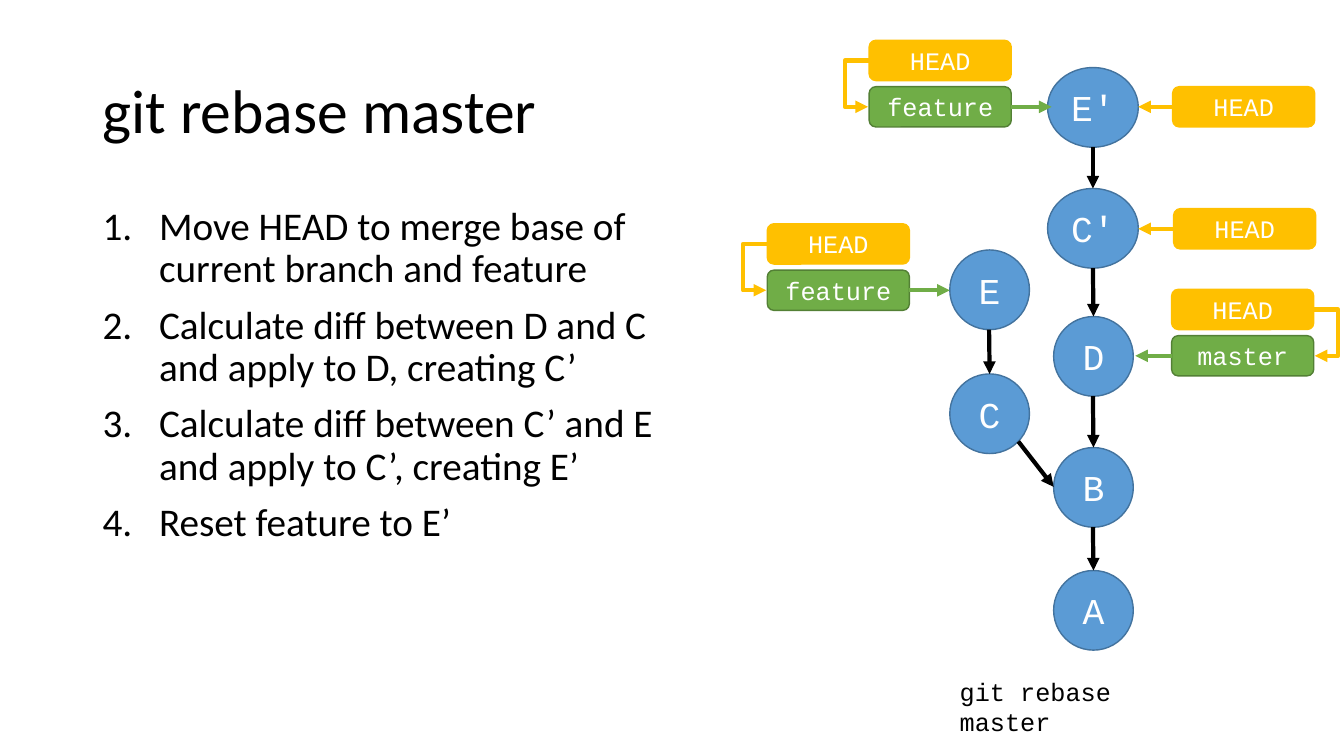
import pptx
import pptx.util
import pptx.dml.color
import pptx.enum.shapes
import pptx.enum.text
import pptx.oxml
import pptx.oxml.ns
from dataclasses import dataclass

PX = 9144  # 100 px to the inch
SHAPE = pptx.enum.shapes.MSO_SHAPE
CONNECTOR = pptx.enum.shapes.MSO_CONNECTOR
ANCHOR = pptx.enum.text.MSO_ANCHOR
ALIGN = pptx.enum.text.PP_ALIGN


@dataclass(frozen=True)
class Theme:
    sans: str = "Calibri"
    mono: str = "Courier New"
    black: str = "000000"
    white: str = "FFFFFF"
    commit: str = "5B9BD5"
    commit_line: str = "43739E"
    branch: str = "70AD47"
    branch_line: str = "538035"
    head: str = "FFC000"
    title_size: int = 44
    body_size: int = 28
    commit_size: int = 26
    label_size: int = 18
    outline: int = 1
    arrow: int = 3


T = Theme()
LABEL_W, LABEL_H, LABEL_PITCH = 141, 40, 46
NODE_H = 79

STEPS = [
    "Move HEAD to merge base of current branch and feature",
    "Calculate diff between D and C and apply to D, creating C’",
    "Calculate diff between C’ and E and apply to C’, creating E’",
    "Reset feature to E’",
]
# commit: left, top, width inside the graph
COMMITS = {
    "A": (309, 526, 79), "B": (309, 404, 79), "D": (309, 274, 79),
    "C": (206, 331, 79), "E": (206, 208, 79),
    "C'": (303, 147, 90), "E'": (303, 27, 90),
}
PARENTS = [("B", "A"), ("D", "B"), ("E", "C"), ("C'", "D"), ("E'", "C'")]
# label, left, top, commit it points to, gap at the tip, HEAD stacked above
REFS = [
    ("master", 426, 293, "D", 2, True),
    ("feature", 25, 228, "E", 0, True),
    ("feature", 126, 46, "E'", -4, True),
    ("HEAD", 428, 167, "C'", 0, False),
    ("HEAD", 427, 46, "E'", 0, False),
]


def emu(*lengths):
    return [pptx.util.Emu(n * PX) for n in lengths]


def rgb(color):
    return pptx.dml.color.RGBColor.from_string(color)


def style_runs(tf, font, size, color):
    for p in tf.paragraphs:
        for r in p.runs:
            r.font.name = font
            r.font.size = pptx.util.Pt(size)
            r.font.color.rgb = rgb(color)


def add_text(slide, box, text, font, size):
    tf = slide.shapes.add_textbox(*emu(*box)).text_frame
    tf.word_wrap = True
    tf.text = text
    style_runs(tf, font, size, T.black)
    return tf


def add_node(slide, kind, box, text, size, fill, line):
    sp = slide.shapes.add_shape(kind, *emu(*box))
    sp.shadow.inherit = False
    sp.fill.solid()
    sp.fill.fore_color.rgb = rgb(fill)
    sp.line.color.rgb = rgb(line)
    sp.line.width = pptx.util.Pt(T.outline)
    tf = sp.text_frame
    tf.text = text
    tf.vertical_anchor = ANCHOR.MIDDLE
    tf.paragraphs[0].alignment = ALIGN.CENTER
    style_runs(tf, T.mono, size, T.white)
    return sp


def add_label(slide, x, y, text):
    fill, line = (T.head, T.head) if text == "HEAD" else (T.branch, T.branch_line)
    return add_node(slide, SHAPE.ROUNDED_RECTANGLE, (x, y, LABEL_W, LABEL_H),
                    text, T.label_size, fill, line)


def add_arrow(slide, start, end, color, kind=CONNECTOR.STRAIGHT):
    cx = slide.shapes.add_connector(kind, *emu(*start, *end))
    cx.line.color.rgb = rgb(color)
    cx.line.width = pptx.util.Pt(T.arrow)
    ln = cx.line._get_or_add_ln()
    pptx.oxml.ns.qn("a:tailEnd")
    ln.append(ln.makeelement(pptx.oxml.ns.qn("a:tailEnd"), {"type": "triangle"}))
    sp_pr = cx._element.spPr
    sp_pr.append(sp_pr.makeelement(pptx.oxml.ns.qn("a:effectLst"), {}))
    return cx


def add_hook(slide, edge, side, y):
    """Elbow from HEAD round to the branch below it; side is -1 left, 1 right."""
    reach = 25
    cx = add_arrow(slide, (edge - side, y), (edge + side, y + LABEL_PITCH),
                   T.head, CONNECTOR.ELBOW)
    geom = cx._element.spPr.find(pptx.oxml.ns.qn("a:prstGeom"))
    guides = geom.get_or_add_avLst()
    guides.append(guides.makeelement(
        pptx.oxml.ns.qn("a:gd"),
        {"name": "adj1", "fmla": f"val {reach * 100000 // 2}"}))


def title(slide, box):
    tf = add_text(slide, box, "git rebase master", T.sans, T.title_size)
    tf.vertical_anchor = ANCHOR.MIDDLE
    tf.paragraphs[0].line_spacing = 0.9


def numbered_steps(slide, box):
    tf = add_text(slide, box, "\n".join(STEPS), T.sans, T.body_size)
    indent = 56 * PX
    for p in tf.paragraphs:
        p.line_spacing = 0.9
        p.space_before = pptx.util.Pt(10)
        p_pr = p._p.get_or_add_pPr()
        p_pr.set("marL", str(indent))
        p_pr.set("indent", str(-indent))
        p_pr.append(p_pr.makeelement(pptx.oxml.ns.qn("a:buAutoNum"),
                                     {"type": "arabicPeriod"}))


def commit_graph(slide, box):
    left, top, width, height = box
    nodes = {}
    # Commits
    for name, (x, y, w) in COMMITS.items():
        nodes[name] = add_node(slide, SHAPE.OVAL, (left + x, top + y, w, NODE_H),
                               name, T.commit_size, T.commit, T.commit_line)
    # Arrows to parents
    for child, parent in PARENTS:
        x, y, w = COMMITS[child]
        px, py, pw = COMMITS[parent]
        cx = add_arrow(slide, (left + x + w // 2, top + y + NODE_H),
                       (left + px + pw // 2, top + py), T.black)
        cx.end_connect(nodes[parent], 0)
    cx, cy, cw = COMMITS["C"]
    bx, by, bw = COMMITS["B"]
    add_arrow(slide, (left + cx + 68, top + cy + 67),
              (left + bx, top + by + NODE_H // 2), T.black)
    # Branch and HEAD labels
    for text, x, y, target, gap, has_head in REFS:
        tx, ty, tw = COMMITS[target]
        on_left = x < tx
        label = add_label(slide, left + x, top + y, text)
        middle = top + y + LABEL_H // 2
        start = x + LABEL_W if on_left else x
        tip = tx - gap if on_left else tx + tw + gap
        arrow = add_arrow(slide, (left + start, middle), (left + tip, middle),
                          T.head if text == "HEAD" else T.branch)
        arrow.begin_connect(label, 3 if on_left else 1)
        if has_head:
            add_label(slide, left + x, top + y - LABEL_PITCH, "HEAD")
            edge = x if on_left else x + LABEL_W
            add_hook(slide, left + edge, -1 if on_left else 1, middle - LABEL_PITCH)
    # Caption
    tf = add_text(slide, (left + 206, top + height - 40, 254, 40),
                  "git rebase master", T.mono, T.label_size)
    tf.auto_size = pptx.enum.text.MSO_AUTO_SIZE.SHAPE_TO_FIT_TEXT


def main():
    prs = pptx.Presentation()
    prs.slide_width, prs.slide_height = emu(1333, 750)
    slide = prs.slides.add_slide(prs.slide_layouts[6])
    title(slide, (92, 40, 1150, 145))
    numbered_steps(slide, (92, 200, 626, 476))
    commit_graph(slide, (736, 40, 592, 666))
    prs.save("out.pptx")


if __name__ == "__main__":
    main()
